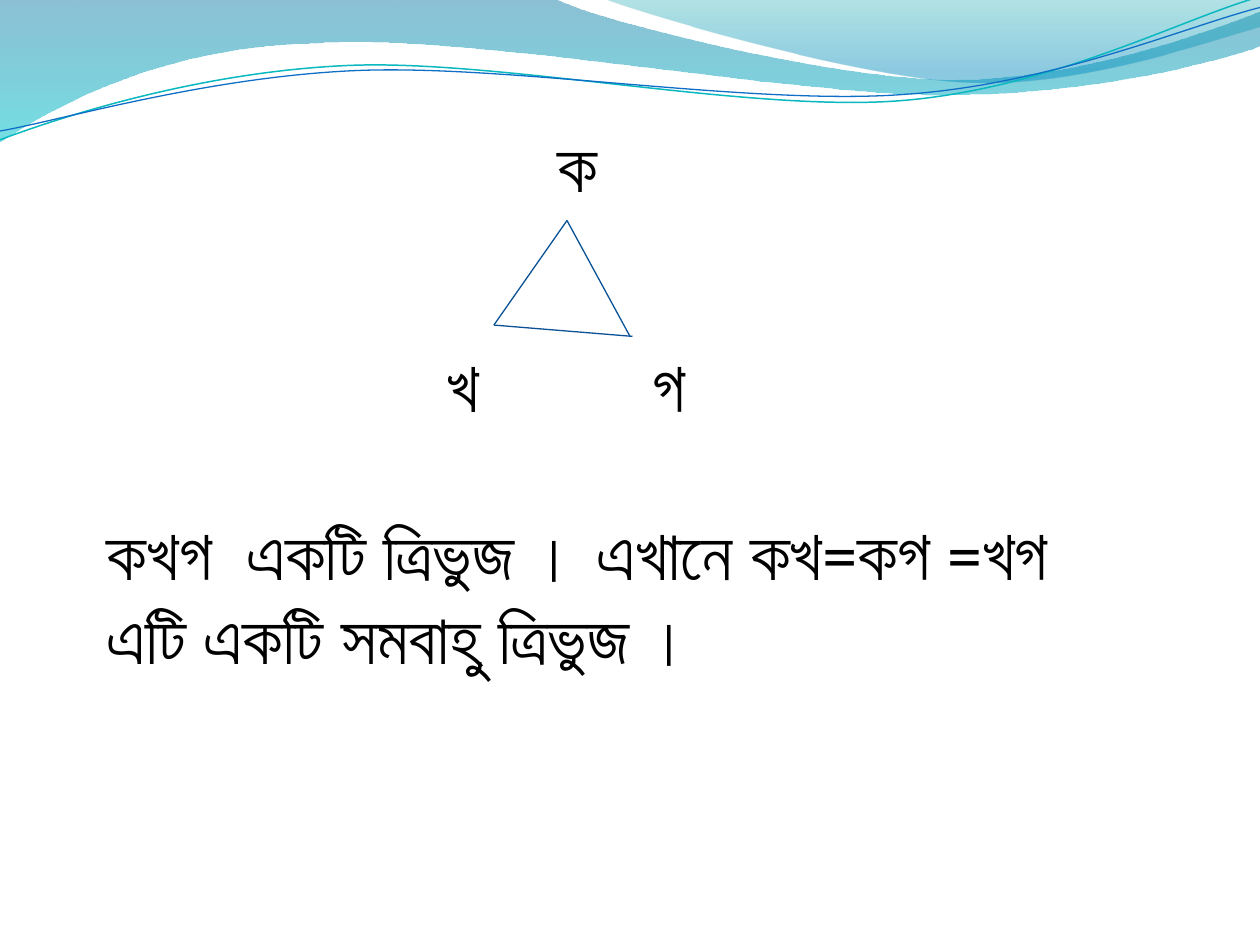
import math

import lxml.etree
import pptx
import pptx.dml.color
import pptx.enum.shapes
import pptx.enum.text
import pptx.oxml.ns
import pptx.util

Inches = pptx.util.Inches
Pt = pptx.util.Pt
RGBColor = pptx.dml.color.RGBColor
qn = pptx.oxml.ns.qn

BLACK = RGBColor(0x00, 0x00, 0x00)
NAVY = RGBColor(0x09, 0x52, 0x95)
BLUE = RGBColor(0x0F, 0x6F, 0xC6)
TEAL = RGBColor(0x0A, 0xB8, 0xBF)
DEEP = RGBColor(0x00, 0x74, 0xA1)
AQUA = RGBColor(0x00, 0xC6, 0xCF)
SEA = RGBColor(0x00, 0xA1, 0xA9)
SKY = RGBColor(0x00, 0x8B, 0xBF)
UNITS = 1000
TILT = 2.7

deck = pptx.Presentation()
deck.slide_width = Inches(10)
deck.slide_height = Inches(7.5)
slide = deck.slides.add_slide(deck.slide_layouts[6])
shapes = slide.shapes


def draw_wave(start, parts, close):
    points = [(part[i] * UNITS, part[i + 1] * UNITS)
              for part in parts for i in range(0, len(part), 2)]
    pen = shapes.build_freeform(start[0] * UNITS, start[1] * UNITS,
                                scale=Inches(1) / UNITS)
    pen.add_line_segments(points, close=close)
    wave = pen.convert_to_shape()
    wave.shadow.inherit = False
    nodes = iter(list(wave._element.iter(qn("a:lnTo"))))
    for part in parts:
        node = next(nodes)
        if len(part) == 6:
            bend = lxml.etree.Element(qn("a:cubicBezTo"))
            node.addprevious(bend)
            for old in (node, next(nodes), next(nodes)):
                bend.append(old[0])
                old.getparent().remove(old)
    return wave


def turn(pairs, mid):
    angle = math.radians(TILT)
    result = []
    for x, y in zip(pairs[::2], pairs[1::2]):
        dx, dy = x - mid[0], y - mid[1]
        result += [mid[0] + dx * math.cos(angle) - dy * math.sin(angle),
                   mid[1] + dx * math.sin(angle) + dy * math.cos(angle)]
    return result


bands = [
    ((0, 0),
     [(4.4, -0.01), (4.76, 0.17, 6.64, 0.63, 7.58, 0.63),
      (8.53, 0.63, 9.58, 0.26, 10, 0.09), (10.01, 0.36),
      (9.83, 0.44, 8.7, 0.76, 7.46, 0.75), (6.22, 0.75, 3.82, 0.28, 2.57, 0.34),
      (1.29, 0.36, 0.46, 0.83, -0.01, 1.13), (0, 0)],
     [(0, DEEP, 45), (1, AQUA, 55)]),
    ((4.79, -0.01),
     [(5.09, 0.11, 6.82, 0.62, 7.69, 0.65), (8.56, 0.69, 9.61, 0.32, 10, 0.21),
      (10, 0), (4.79, -0.01)],
     [(0, SEA, 30), (0.8, SKY, 45)]),
]
for start, parts, stops in bands:
    band = draw_wave(start, parts, True)
    band.line.fill.background()
    band.fill.gradient()
    band.fill.gradient_angle = 270
    for stop, (place, color, _) in zip(band.fill.gradient_stops, stops):
        stop.position = place
        stop.color.rgb = color
    for node, (_, _, alpha) in zip(band._element.iter(qn("a:srgbClr")), stops):
        lxml.etree.SubElement(node, qn("a:alpha"), val=str(alpha * 1000))

curves = [
    ((0, 1.11),
     [(0.48, 0.93, 1.58, 0.57, 2.77, 0.52), (3.95, 0.47, 5.93, 0.89, 7.13, 0.8),
      (8.33, 0.71, 9.38, 0.15, 9.98, -0.02)], (4.99, 0.57), TEAL, 0.85),
    ((0, 1.04),
     [(0.47, 0.96, 1.64, 0.61, 2.83, 0.56), (4.03, 0.51, 5.97, 0.84, 7.17, 0.75),
      (8.36, 0.67, 9.41, 0.21, 10, 0.06)], (5, 0.59), BLUE, 0.75),
]
for start, parts, mid, color, width in curves:
    curve = draw_wave(turn(start, mid), [turn(part, mid) for part in parts], False)
    curve.rotation = 360 - TILT
    curve.fill.background()
    curve.line.color.rgb = color
    curve.line.width = Pt(width)

LEFT = pptx.enum.text.PP_ALIGN.LEFT
CENTER = pptx.enum.text.PP_ALIGN.CENTER
texts = [
    (4.33, 0.92, 0.42, 0.77, LEFT, ["ক"]),
    (3.17, 2.67, 1, 0.77, CENTER, ["খ"]),
    (5.08, 2.67, 0.5, 0.77, LEFT, ["গ"]),
    (0.75, 4, 8.83, 2.12, LEFT,
     ["কখগ\tএকটি ত্রিভুজ । এখানে কখ=কগ =খগ", "এটি একটি সমবাহু ত্রিভুজ ।"]),
]
for left, top, width, height, align, lines in texts:
    box = shapes.add_textbox(Inches(left), Inches(top), Inches(width), Inches(height))
    frame = box.text_frame
    frame.word_wrap = True
    frame.auto_size = pptx.enum.text.MSO_AUTO_SIZE.SHAPE_TO_FIT_TEXT
    frame.text = "\n".join(lines)
    for para in frame.paragraphs:
        para.alignment = align
        if "\t" in para.text:
            tabs = lxml.etree.SubElement(para._p.get_or_add_pPr(), qn("a:tabLst"))
            lxml.etree.SubElement(tabs, qn("a:tab"), pos=str(Inches(1.11)), algn="l")
        para.font.size = Pt(40)
        para.font.name = "Calibri"
        para.font.color.rgb = BLACK

top, left = (4.5, 1.75), (3.92, 2.58)
for start, end in [(top, (5, 2.67)), (top, left), (left, (5.02, 2.67))]:
    side = shapes.add_connector(
        pptx.enum.shapes.MSO_CONNECTOR.STRAIGHT,
        *(Inches(value) for value in start + end))
    side.line.color.rgb = NAVY
    side.line.width = Pt(0.75)
    lxml.etree.SubElement(side._element.spPr, qn("a:effectLst"))

deck.save("out.pptx")
